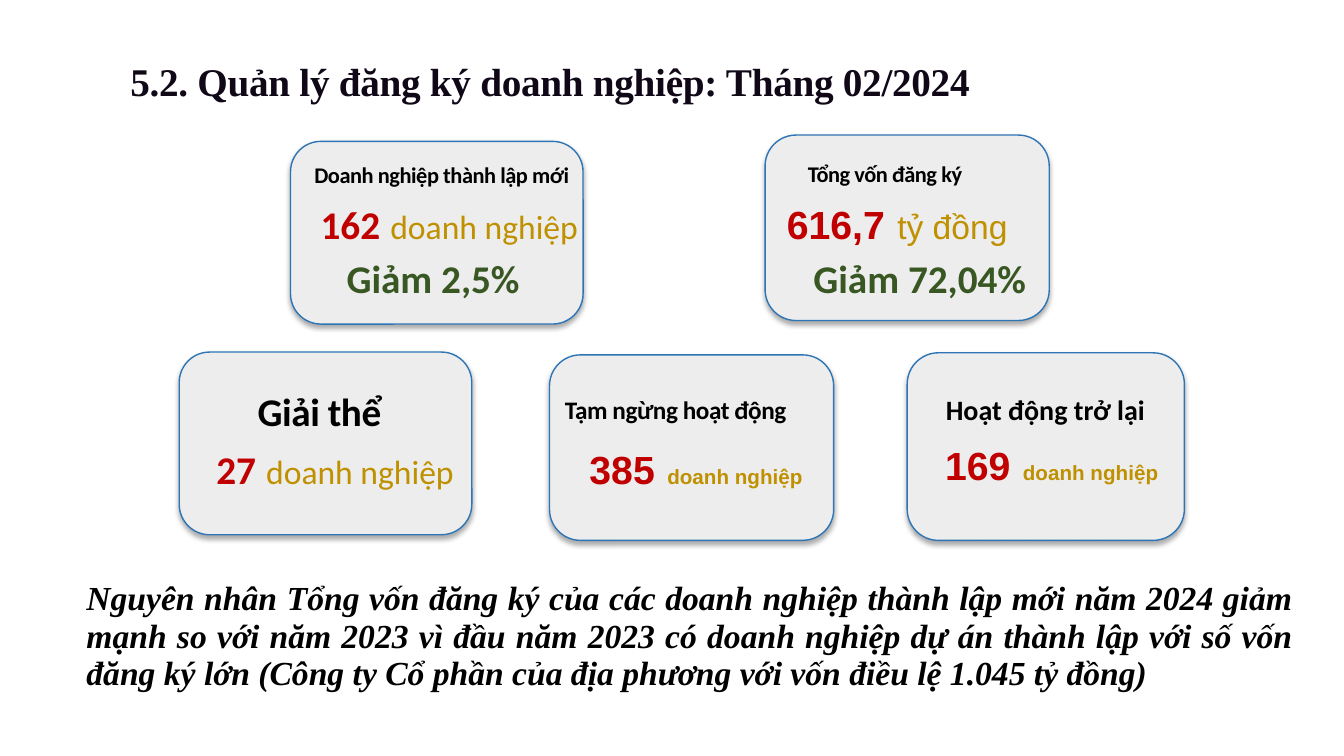
from dataclasses import dataclass

from lxml import etree
from pptx import Presentation
from pptx.dml.color import RGBColor
from pptx.enum.shapes import MSO_SHAPE
from pptx.enum.text import MSO_ANCHOR, PP_ALIGN
from pptx.oxml.ns import qn
from pptx.util import Pt

ROUNDED = MSO_SHAPE.ROUNDED_RECTANGLE
LEFT, CENTER, JUSTIFY = PP_ALIGN.LEFT, PP_ALIGN.CENTER, PP_ALIGN.JUSTIFY
MIDDLE = MSO_ANCHOR.MIDDLE


@dataclass(frozen=True)
class Theme:
    card: str = "EDEDED"
    border: str = "2E75B6"
    title: str = "100717"
    text: str = "000000"
    number: str = "C00000"
    unit: str = "BF9000"
    change: str = "385723"
    serif: str = "Times New Roman"
    sans: str = "Calibri"
    alt_sans: str = "Arial"
    large: float = 28
    gap: float = 32
    medium: float = 24
    small_unit: float = 14.7


T = Theme()

# Boxes are left, top, width, height in points.
# Labels: box, text, size, letter spacing, alignment.
# Values: box, number, unit, font, unit size, unit bold.
# Changes: box, text.
CARDS = [
    dict(box=(546.5, 96.5, 203, 132.5),
         label=((570, 111, 148, 46), "Tổng vốn đăng ký", 16, -0.3, LEFT),
         value=((555, 135.5, 174, 46), "616,7", "tỷ đồng", T.alt_sans, T.medium, False),
         change=((574, 178, 168.5, 41), "Giảm 72,04%")),
    dict(box=(207.5, 101, 209, 130.5),
         label=((217.5, 111.5, 199, 46), "Doanh nghiệp thành lập mới", 16, -0.3, LEFT),
         value=((222, 135.5, 200, 46), "162", "doanh nghiệp", T.sans, T.medium, False),
         change=((240.5, 178, 146, 41), "Giảm 2,5%")),
    dict(box=(392.5, 253.5, 203, 132.5),
         label=((396.5, 278, 201.5, 48), "Tạm ngừng hoạt động", 18, -0.3, LEFT),
         value=((414, 310.5, 168.5, 46), "385", "doanh nghiệp", T.alt_sans, T.small_unit, True)),
    dict(box=(648, 252, 198, 134),
         label=((658, 277, 177.5, 51), "Hoạt động trở lại", 20, 0, CENTER),
         value=((668, 308, 168.5, 46), "169", "doanh nghiệp", T.alt_sans, T.small_unit, True)),
    dict(box=(128, 251.5, 209, 130.5),
         label=((177, 273, 119, 60), "Giải thể", T.large, -0.3, LEFT),
         value=((147.5, 310.5, 186, 46), "27", "doanh nghiệp", T.sans, T.medium, False)),
]

REASON = ("Nguyên nhân Tổng vốn đăng ký của các doanh nghiệp thành lập mới năm 2024 "
          "giảm mạnh so với năm 2023 vì đầu năm 2023 có doanh nghiệp dự án thành lập "
          "với số vốn đăng ký lớn (Công ty Cổ phần của địa phương với vốn điều lệ "
          "1.045 tỷ đồng)")


def points(box):
    return [Pt(v) for v in box]


def style_run(r, size, color, font, bold=True, italic=False, spacing=0):
    r.font.size = Pt(size)
    r.font.name = font
    r.font.bold = bold
    r.font.italic = italic
    r.font.color.rgb = RGBColor.from_string(color)
    if spacing:
        r.font._element.set("spc", str(round(spacing * 100)))


def add_text(shapes, box, runs, align=LEFT):
    """Add one paragraph; each run is its text and its style."""
    tf = shapes.add_textbox(*points(box)).text_frame
    tf.word_wrap = True
    p = tf.paragraphs[0]
    p.alignment = align
    for text, style in runs:
        r = p.add_run()
        r.text = text
        style_run(r, **style)
    return p


def add_shadow(sp):
    effects = etree.SubElement(sp._element.spPr, qn("a:effectLst"))
    shadow = etree.SubElement(effects, qn("a:outerShdw"), blurRad=str(Pt(3.5)),
                              dist=str(Pt(2.2)), dir="5400000", rotWithShape="0")
    color = etree.SubElement(shadow, qn("a:srgbClr"), val=T.text)
    etree.SubElement(color, qn("a:alpha"), val="32000")


def add_card(slide, box, label, value, change=None):
    shapes = slide.shapes.add_group_shape().shapes
    sp = shapes.add_shape(ROUNDED, *points(box))
    sp.fill.solid()
    sp.fill.fore_color.rgb = RGBColor.from_string(T.card)
    sp.line.color.rgb = RGBColor.from_string(T.border)
    sp.line.width = Pt(1)
    add_shadow(sp)

    label_box, text, size, spacing, align = label
    add_text(shapes, label_box,
             [(text, dict(size=size, color=T.text, font=T.sans, spacing=spacing))], align)

    value_box, number, unit, font, unit_size, unit_bold = value
    add_text(shapes, value_box, [
        (number, dict(size=T.large, color=T.number, font=font)),
        (" ", dict(size=T.gap, color=T.change, font=font)),
        (unit, dict(size=unit_size, color=T.unit, font=font, bold=unit_bold)),
    ])

    if change:
        change_box, text = change
        add_text(shapes, change_box,
                 [(text, dict(size=T.large, color=T.change, font=T.sans))])


def add_reason(slide, box, text):
    table = slide.shapes.add_table(1, 1, *points(box)).table
    table.first_row = table.horz_banding = False
    cell = table.cell(0, 0)
    cell.fill.background()
    cell.vertical_anchor = MIDDLE
    p = cell.text_frame.paragraphs[0]
    p.text = text
    p.alignment = JUSTIFY
    p.space_before = p.space_after = Pt(6)
    style_run(p.runs[0], T.medium, T.text, T.serif, italic=True)


def main():
    prs = Presentation()
    prs.slide_width, prs.slide_height = Pt(960), Pt(540)
    slide = prs.slides.add_slide(prs.slide_layouts[6])

    # Indicator cards
    for card in CARDS:
        add_card(slide, **card)

    # Title
    title = add_text(slide.shapes, (86, 37.5, 622, 41), [
        ("5.2. Quản lý đăng ký doanh nghiệp: Tháng 02/2024",
         dict(size=T.large, color=T.title, font=T.serif, spacing=-0.2))])
    title.space_before = Pt(3)

    # Explanation
    add_reason(slide, (54.5, 408, 876, 93.5), REASON)

    prs.save("out.pptx")


if __name__ == "__main__":
    main()
